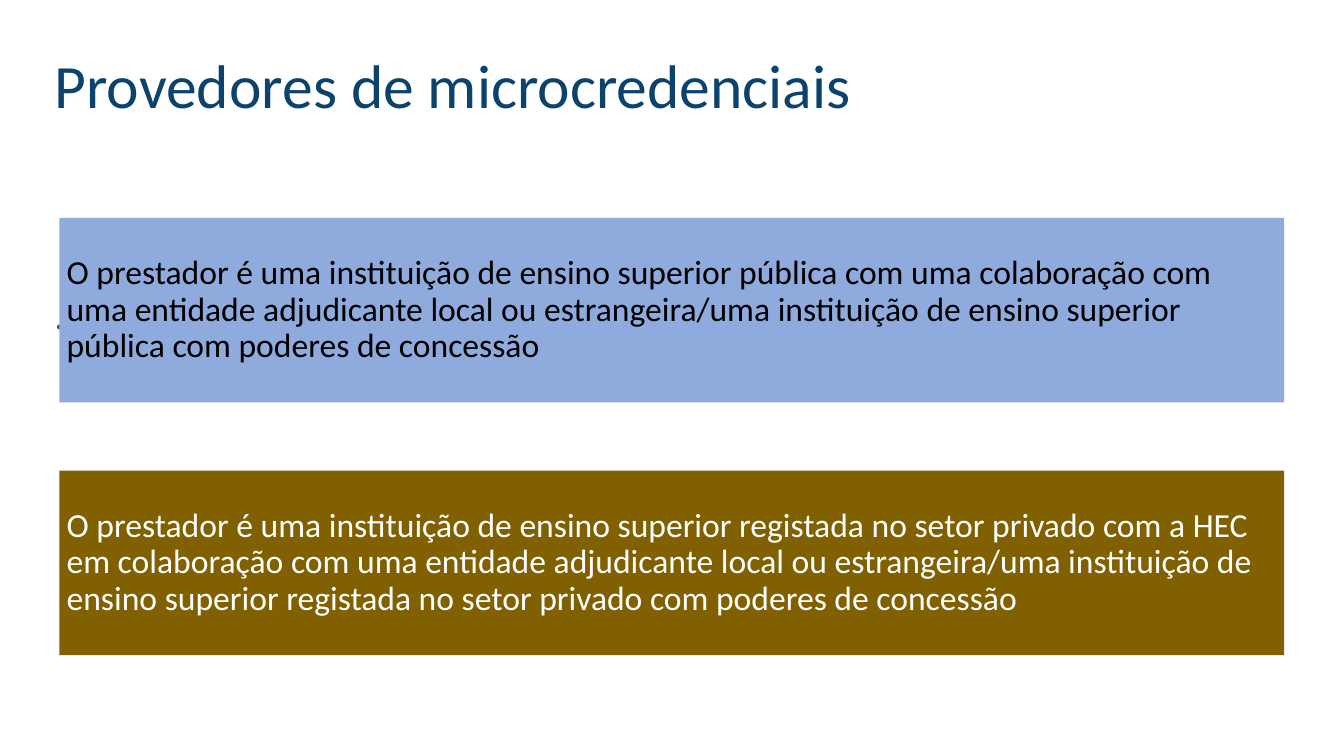
from pptx import Presentation
from pptx.dml.color import RGBColor
from pptx.enum.shapes import MSO_SHAPE
from pptx.enum.text import MSO_ANCHOR, PP_ALIGN
from pptx.util import Cm, Pt

TITLE = "Provedores de microcredenciais"
BODY = "."
PROVIDERS = [
    ("O prestador é uma instituição de ensino superior pública com uma colaboração com "
     "uma entidade adjudicante local ou estrangeira/uma instituição de ensino superior "
     "pública com poderes de concessão", "blue", "black"),
    ("O prestador é uma instituição de ensino superior registada no setor privado com a HEC "
     "em colaboração com uma entidade adjudicante local ou estrangeira/uma instituição de "
     "ensino superior registada no setor privado com poderes de concessão", "brown", "white"),
]
COLORS = {"navy": "0B436D", "slate": "44546A", "blue": "8FAADC",
          "brown": "806000", "black": "000000", "white": "FFFFFF"}
FONT = "Calibri"
BAND_LEFT, BAND_TOP, BAND_WIDTH, BAND_HEIGHT, BAND_GAP = 1.5, 5.49, 30.86, 4.65, 1.72


def color(name):
    return RGBColor.from_string(COLORS[name])


def write(shape, text, size, color_name, anchor):
    text_frame = shape.text_frame
    text_frame.text = text
    text_frame.word_wrap = True
    text_frame.vertical_anchor = anchor
    paragraph = text_frame.paragraphs[0]
    paragraph.alignment = PP_ALIGN.LEFT
    paragraph.line_spacing = 0.9
    font = paragraph.runs[0].font
    font.name, font.size = FONT, Pt(size)
    font.color.rgb = color(color_name)


def add_band(slide, index, text, fill, text_color):
    top = BAND_TOP + index * (BAND_HEIGHT + BAND_GAP)
    band = slide.shapes.add_shape(MSO_SHAPE.RECTANGLE, Cm(BAND_LEFT), Cm(top),
                                  Cm(BAND_WIDTH), Cm(BAND_HEIGHT))
    band.shadow.inherit = False
    band.fill.solid()
    band.fill.fore_color.rgb = color(fill)
    band.line.fill.background()
    write(band, text, 24, text_color, MSO_ANCHOR.MIDDLE)
    frame = band.text_frame
    frame.margin_left = frame.margin_right = Cm(0.18)
    frame.margin_top = frame.margin_bottom = Cm(0.18)


def main():
    presentation = Presentation()
    presentation.slide_width, presentation.slide_height = Cm(33.87), Cm(19.05)
    slide = presentation.slides.add_slide(presentation.slide_layouts[5])

    title = slide.shapes.title
    title.left, title.top, title.width, title.height = Cm(1.12), Cm(0.38), Cm(29.21), Cm(3.68)
    write(title, TITLE, 44, "navy", MSO_ANCHOR.MIDDLE)

    body = slide.shapes.add_textbox(Cm(1.12), Cm(4.45), Cm(31.6), Cm(12.09))
    write(body, BODY, 28, "slate", MSO_ANCHOR.TOP)
    body.text_frame.margin_top = Cm(3)

    for index, provider in enumerate(PROVIDERS):
        add_band(slide, index, *provider)

    presentation.save("out.pptx")


if __name__ == "__main__":
    main()
